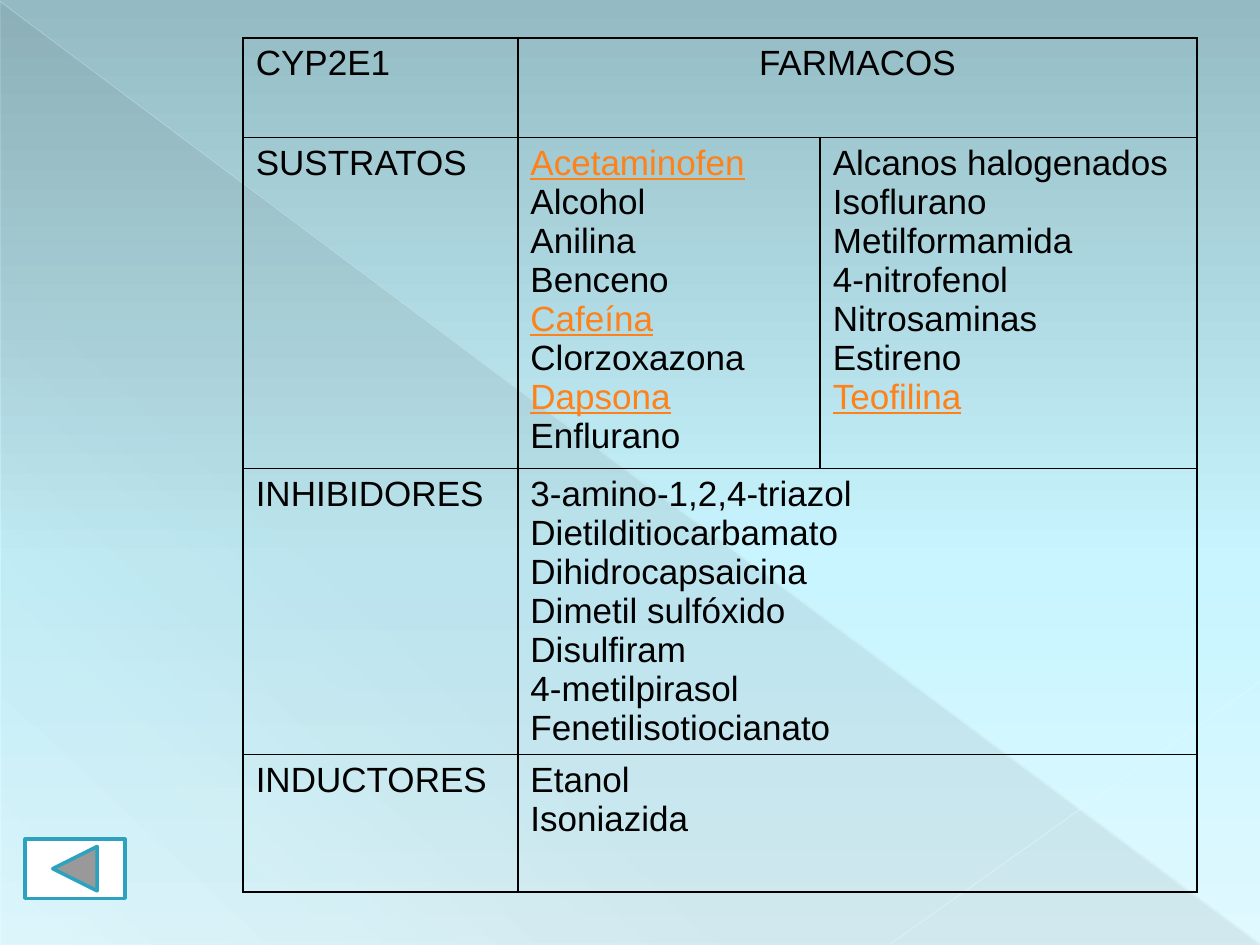
from dataclasses import dataclass

from lxml.etree import SubElement
from pptx import Presentation
from pptx.dml.color import RGBColor
from pptx.enum.shapes import MSO_CONNECTOR, MSO_SHAPE as Shape
from pptx.enum.text import PP_ALIGN
from pptx.oxml import parse_xml
from pptx.oxml.ns import nsdecls, qn
from pptx.util import Emu, Inches, Pt


@dataclass(frozen=True)
class Theme:
    font: str = "Arial"
    size: int = 20
    text: str = "000000"
    highlight: str = "FF8119"
    border: str = "000000"
    button_fill: str = "FFFFFF"
    button_line: str = "2DA2BF"
    shade: str = "464646"
    ray: str = "EBFBFF"
    short_ray: str = "EDFCFF"
    sky: tuple = ((0, "94BBC3", 100), (60, "C8F5FF", 100), (100, "DFF9FF", 100))


THEME = Theme()
HANGING = Inches(0.38)
COLUMN_WIDTHS = (2.18, 2.4, 2.99)
ROW_HEIGHTS = (0.79, 2.63, 2.27, 1.09)
HIGHLIGHTED = {"Acetaminofen", "Cafeína", "Dapsona", "Teofilina"}
ROWS = (
    (["CYP2E1"], ["FARMACOS"]),
    (
        ["SUSTRATOS"],
        ["Acetaminofen", "Alcohol", "Anilina", "Benceno",
         "Cafeína", "Clorzoxazona", "Dapsona", "Enflurano"],
        ["Alcanos halogenados", "Isoflurano", "Metilformamida", "4-nitrofenol",
         "Nitrosaminas", "Estireno", "Teofilina"],
    ),
    (
        ["INHIBIDORES"],
        ["3-amino-1,2,4-triazol", "Dietilditiocarbamato", "Dihidrocapsaicina",
         "Dimetil sulfóxido", "Disulfiram", "4-metilpirasol", "Fenetilisotiocianato"],
    ),
    (["INDUCTORES"], ["Etanol", "Isoniazida"]),
)


def color(value):
    return RGBColor.from_string(value)


def set_gradient(properties, stops, angle):
    """Replace the solid fill with a gradient of (position, colour, opacity) stops."""
    stop_xml = "".join(
        f'<a:gs pos="{position * 1000}"><a:srgbClr val="{value}">'
        f'<a:alpha val="{opacity * 1000}"/></a:srgbClr></a:gs>'
        for position, value, opacity in stops
    )
    gradient = parse_xml(
        f'<a:gradFill {nsdecls("a")} rotWithShape="1"><a:gsLst>{stop_xml}</a:gsLst>'
        f'<a:lin ang="{angle * 60000}" scaled="0"/></a:gradFill>'
    )
    properties.replace(properties.find(qn("a:solidFill")), gradient)


def add_shape(slide, kind, left, top, width, height, fill):
    shape = slide.shapes.add_shape(
        kind, Inches(left), Inches(top), Inches(width), Inches(height)
    )
    shape.shadow.inherit = False
    shape.fill.solid()
    shape.fill.fore_color.rgb = color(fill)
    return shape


def add_ray(slide, start, end, value, width, opacity):
    ray = slide.shapes.add_connector(
        MSO_CONNECTOR.STRAIGHT, *(Inches(length) for length in start + end)
    )
    ray.line.color.rgb = color(value)
    ray.line.width = Pt(width)
    properties = ray._element.spPr
    srgb = next(properties.iter(qn("a:srgbClr")))
    SubElement(srgb, qn("a:alpha"), val=str(opacity * 1000))
    SubElement(properties, qn("a:effectLst"))


def add_background(slide):
    slide.background.fill.solid()
    set_gradient(next(slide.element.iter(qn("p:bgPr"))), THEME.sky, 90)
    triangle = add_shape(slide, Shape.RIGHT_TRIANGLE, 0.01, 0.02, 9.99, 7.48, THEME.shade)
    triangle.line.fill.background()
    opacities = ((0, 10), (70, 8), (100, 1))
    stops = [(position, THEME.shade, opacity) for position, opacity in opacities]
    set_gradient(triangle._element.spPr, stops, 133)
    add_ray(slide, (0, 0.01), (9.99, 7.49), THEME.ray, 0.39, 35)
    add_ray(slide, (10, 5.41), (7.07, 7.49), THEME.short_ray, 0.47, 45)


def set_borders(cell):
    properties = cell._tc.get_or_add_tcPr()
    for index, side in enumerate(("lnL", "lnR", "lnT", "lnB")):
        properties.insert(index, parse_xml(
            f'<a:{side} {nsdecls("a")} w="{Pt(1)}"><a:solidFill>'
            f'<a:srgbClr val="{THEME.border}"/></a:solidFill></a:{side}>'
        ))


def fill_cell(cell, lines):
    cell.text_frame.text = "\n".join(lines)
    for paragraph in cell.text_frame.paragraphs:
        properties = paragraph._p.get_or_add_pPr()
        properties.set("marL", str(HANGING))
        properties.set("indent", str(-HANGING))
        highlighted = paragraph.text in HIGHLIGHTED
        font = paragraph.runs[0].font
        font.name = THEME.font
        font.size = Pt(THEME.size)
        font.underline = highlighted
        font.color.rgb = color(THEME.highlight if highlighted else THEME.text)


def add_drug_table(slide):
    table = slide.shapes.add_table(
        len(ROWS), len(COLUMN_WIDTHS), Inches(1.93), Inches(0.3),
        Inches(sum(COLUMN_WIDTHS)), Inches(sum(ROW_HEIGHTS)),
    ).table
    table.first_row = table.horz_banding = False
    for column, width in zip(table.columns, COLUMN_WIDTHS):
        column.width = Inches(width)
    for row, height in zip(table.rows, ROW_HEIGHTS):
        row.height = Inches(height)
    for cell in table.iter_cells():
        cell.fill.background()
        set_borders(cell)
    for row_index, contents in enumerate(ROWS):
        if len(contents) == 2:
            table.cell(row_index, 1).merge(table.cell(row_index, 2))
        for column_index, lines in enumerate(contents):
            fill_cell(table.cell(row_index, column_index), lines)
    heading = table.cell(0, 1).text_frame.paragraphs[0]
    heading.alignment = PP_ALIGN.CENTER


def add_back_button(slide):
    button = add_shape(
        slide, Shape.ACTION_BUTTON_BACK_OR_PREVIOUS, 0.2, 6.66, 0.79, 0.47, THEME.button_fill
    )
    button.line.color.rgb = color(THEME.button_line)
    button.line.width = Pt(2)


def main():
    presentation = Presentation()
    presentation.slide_width = Inches(10)
    presentation.slide_height = Inches(7.5)
    slide = presentation.slides.add_slide(presentation.slide_layouts[6])
    add_background(slide)
    add_drug_table(slide)
    add_back_button(slide)
    presentation.save("out.pptx")


if __name__ == "__main__":
    main()
